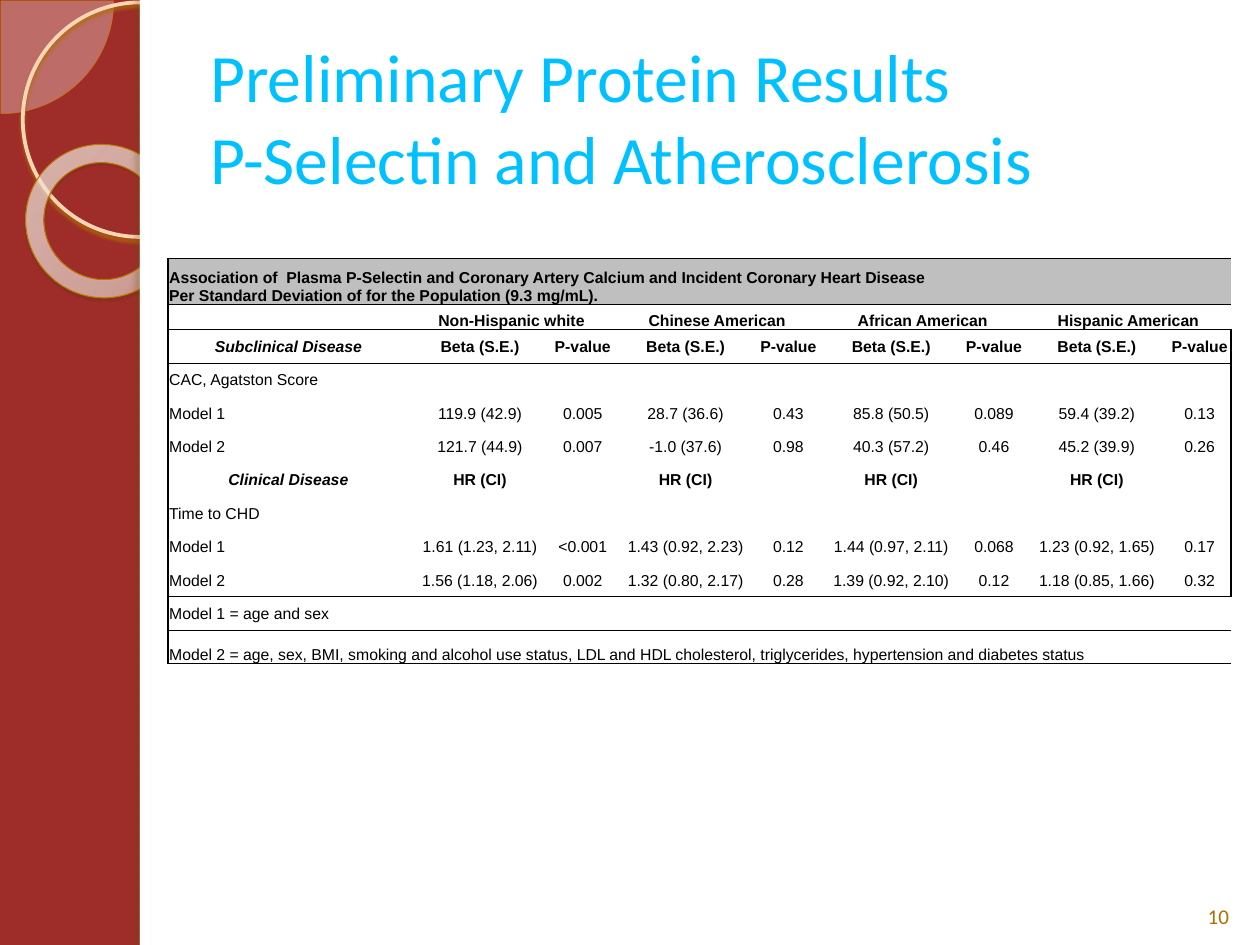
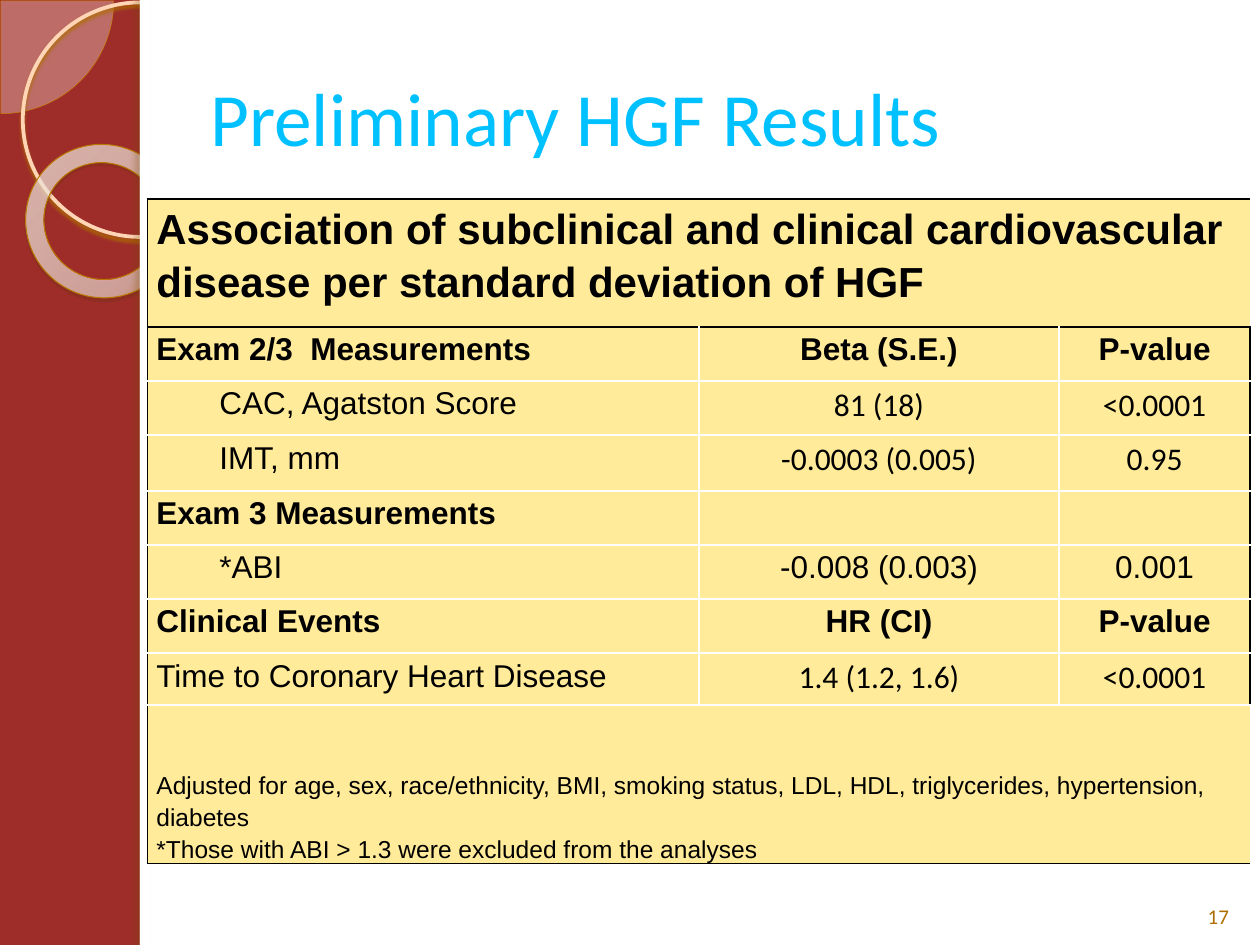
from pptx import Presentation
from pptx import util as u
from pptx.dml.color import RGBColor
from pptx.enum import shapes, text
from pptx.oxml import parse_xml
from pptx.oxml.ns import nsdecls, qn

Pt = u.Pt
MSO = shapes.MSO_SHAPE
LEFT, CENTER = text.PP_ALIGN.LEFT, text.PP_ALIGN.CENTER
TOP, MIDDLE, BOTTOM = (text.MSO_ANCHOR.TOP, text.MSO_ANCHOR.MIDDLE,
                       text.MSO_ANCHOR.BOTTOM)

C = {"band": "9E2D2A", "panel": "FFFFFF", "title": "00C1FF", "number": "AD6F00",
     "ink": "000000", "grey": "BFBFBF", "sand": "FFEB99"}

SLIDE_W, SLIDE_H = 720, 540
TITLE_BOX = (113, 21.6, 590.4, 90)
NUMBER_BOX = (678.2, 496.8, 36, 37.4)

# Shadow: colour, opacity %, blur, distance, direction
DECOR = [
    dict(kind=MSO.PIE, box=(-64, -64, 129, 129), adj=(0, 54.02),
         fill=("FFEFE4", 33), line=("C88000", 0.25)),
    dict(kind=MSO.OVAL, box=(13, 1.4, 134, 134), line=("FFD5B6", 2.15),
         shadow=("AD6F00", 85, 2, 2, 90)),
    dict(kind=MSO.DONUT, box=(14.4, 82.8, 88.6, 87.1), adj=(0.12,), turn=38.6,
         stops=[(0, "FFF5EE", 70), (70, "FFFAF6", 55), (100, "CE8400", 60)],
         line=("BB7800", 0.58), shadow=("563700", 35, 1, 1.2, 75)),
    dict(kind=MSO.RECTANGLE, box=(80, 0, 640, 540), fill=(C["panel"], 100)),
    dict(kind=MSO.RECTANGLE, box=(80, 0, 5.8, 540), fill=(C["panel"], 100),
         shadow=("724A02", 25, 3, 3, 180)),
]

# In a row, None joins the cell to its left; short rows are filled with None.
SELECTIN_ROWS = [
    ("Association of  Plasma P-Selectin and Coronary Artery Calcium and "
     "Incident Coronary Heart Disease \n"
     "Per Standard Deviation of for the Population (9.3 mg/mL).",),
    ("", "Non-Hispanic white", None, "Chinese American", None,
     "African American", None, "Hispanic American", None),
    ("Subclinical Disease",) + ("Beta (S.E.)", "P-value") * 4,
    ("CAC, Agatston Score",) + ("",) * 8,
    ("Model 1", "119.9 (42.9)", "0.005", "28.7 (36.6)", "0.43",
     "85.8 (50.5)", "0.089", "59.4 (39.2)", "0.13"),
    ("Model 2", "121.7 (44.9)", "0.007", "-1.0 (37.6)", "0.98",
     "40.3 (57.2)", "0.46", "45.2 (39.9)", "0.26"),
    ("Clinical Disease",) + ("HR (CI)", "") * 4,
    ("Time to CHD",) + ("",) * 8,
    ("Model 1", "1.61 (1.23, 2.11)", "<0.001", "1.43 (0.92, 2.23)", "0.12",
     "1.44 (0.97, 2.11)", "0.068", "1.23 (0.92, 1.65)", "0.17"),
    ("Model 2", "1.56 (1.18, 2.06)", "0.002", "1.32 (0.80, 2.17)", "0.28",
     "1.39 (0.92, 2.10)", "0.12", "1.18 (0.85, 1.66)", "0.32"),
    ("Model 1 = age and sex",),
    ("Model 2 = age, sex, BMI, smoking and alcohol use status, LDL and HDL "
     "cholesterol, triglycerides, hypertension and diabetes status",),
]
HGF_ROWS = [
    ("Association of subclinical and clinical cardiovascular disease "
     "per standard deviation of HGF",),
    ("Exam 2/3  Measurements", "Beta (S.E.)", "P-value"),
    ("CAC, Agatston Score", "81 (18)", "<0.0001"),
    ("IMT, mm", "-0.0003 (0.005)", "0.95"),
    ("Exam 3 Measurements", "", ""),
    ("*ABI", "-0.008 (0.003)", "0.001"),
    ("Clinical Events", "HR (CI)", "P-value"),
    ("Time to Coronary Heart Disease", "1.4 (1.2, 1.6)", "<0.0001"),
    ("Adjusted for age, sex, race/ethnicity, BMI, smoking status, LDL, HDL, "
     "triglycerides, hypertension, diabetes\n"
     "*Those with ABI > 1.3 were excluded from the analyses",),
]


def selectin_format(row, col):
    heading = row in (2, 6)
    return dict(size=9, bold=row < 2 or heading, italic=heading and col == 0,
                align=CENTER if col or heading else LEFT,
                anchor=BOTTOM if row in (0, 1, 11) else MIDDLE,
                fill=C["grey"] if row == 0 else None)


def hgf_format(row, col):
    return dict(size={0: 24, 8: 14}.get(row, 18), bold=row in (0, 1, 4, 6),
                name="Calibri" if col and row in (2, 3, 7) else "Arial",
                align=CENTER if col else LEFT, spacing=1.15,
                indent=36 if col == 0 and row in (2, 3, 5) else 0,
                anchor=BOTTOM if row == 8 else TOP, fill=C["sand"])


BLACK, THIN, WHITE = (C["ink"], 1), (C["ink"], 0.5), (C["panel"], 1)
SLIDES = [
    dict(title="Preliminary Protein Results \nP-Selectin and Atherosclerosis",
         title_size=38.7, number="10", rows=SELECTIN_ROWS, at=(96, 147.6),
         widths=[137.5] + [81.5, 36] * 4, heights=[26.5, 14.3] + [19.1] * 10,
         cell_format=selectin_format, inset=0.7,
         rules={1: THIN, 2: THIN, 10: THIN}, column_rule=None),
    dict(title="Preliminary HGF Results", title_size=43, number="17",
         rows=HGF_ROWS, at=(84.2, 113.8), widths=[315.2, 205.8, 109.2],
         heights=[73.1, 30.9, 30.9, 31.9, 30.9, 30.9, 30.9, 29.7, 90.5],
         cell_format=hgf_format, inset=5.2,
         rules={1: BLACK, **{n: WHITE for n in range(2, 9)}}, column_rule=WHITE),
]


def rgb(hex_):
    return RGBColor.from_string(hex_)


def pts(values):
    return [Pt(v) for v in values]


def clr(hex_, opacity):
    return f'<a:srgbClr val="{hex_}"><a:alpha val="{opacity * 1000}"/></a:srgbClr>'


def set_attrs(obj, **values):
    for name, value in values.items():
        setattr(obj, name, value)


def write(tf, lines, size, name, color, align, bold=None, italic=None,
          spacing=None, indent=0):
    for i, line in enumerate(lines.split("\n")):
        p = tf.paragraphs[0] if i == 0 else tf.add_paragraph()
        set_attrs(p, alignment=align, line_spacing=spacing)
        if indent:
            p._p.get_or_add_pPr().set("marL", str(Pt(indent)))
        if line:
            r = p.add_run()
            r.text = line
            set_attrs(r.font, size=Pt(size), name=name, bold=bold, italic=italic)
            r.font.color.rgb = rgb(color)
        else:
            p._p.get_or_add_endParaRPr().set("sz", str(int(size * 100)))


def add_decor(slide, item):
    sp = slide.shapes.add_shape(item["kind"], *pts(item["box"]))
    sp.rotation = item.get("turn", 0)
    for i, value in enumerate(item.get("adj", ())):
        sp.adjustments[i] = value
    spPr = sp._element.spPr
    if "stops" in item:
        stops = "".join(f'<a:gs pos="{at * 1000}">{clr(hex_, opacity)}</a:gs>'
                        for at, hex_, opacity in item["stops"])
        spPr.insert(2, parse_xml(
            f'<a:gradFill {nsdecls("a")}><a:gsLst>{stops}</a:gsLst>'
            '<a:path path="circle"><a:fillToRect l="-408000" t="-50000" '
            'r="508000" b="150000"/></a:path></a:gradFill>'))
    elif "fill" in item:
        hex_, opacity = item["fill"]
        sp.fill.solid()
        sp.fill.fore_color.rgb = rgb(hex_)
        if opacity < 100:
            color = spPr.find(qn("a:solidFill"))
            color.replace(color[0], parse_xml(clr(hex_, opacity).replace(
                "<a:srgbClr", f'<a:srgbClr {nsdecls("a")}', 1)))
    else:
        sp.fill.background()
    if "line" in item:
        hex_, width = item["line"]
        sp.line.color.rgb = rgb(hex_)
        sp.line.width = Pt(width)
    else:
        sp.line.fill.background()
    sp.shadow.inherit = False
    if "shadow" in item:
        hex_, opacity, blur, dist, angle = item["shadow"]
        spPr.find(qn("a:effectLst")).append(parse_xml(
            f'<a:outerShdw {nsdecls("a")} blurRad="{Pt(blur)}" dist="{Pt(dist)}" '
            f'dir="{angle * 60000}" algn="tl" rotWithShape="0">'
            f'{clr(hex_, opacity)}</a:outerShdw>'))
    return sp


def decorate_layout(layout, slide):
    """Draw the side band on the slide, then move it to the shared layout."""
    layout.background.fill.solid()
    layout.background.fill.fore_color.rgb = rgb(C["band"])
    for item in DECOR:
        layout.shapes._spTree.append(add_decor(slide, item)._element)


def add_border(cell, side, rule):
    if rule:
        hex_, width = rule
        cell._tc.get_or_add_tcPr().append(parse_xml(
            f'<a:ln{side} {nsdecls("a")} w="{Pt(width)}"><a:solidFill>'
            f'<a:srgbClr val="{hex_}"/></a:solidFill></a:ln{side}>'))


def add_results_table(slide, s):
    widths, heights = s["widths"], s["heights"]
    last_row, last_col = len(heights) - 1, len(widths) - 1
    frame = slide.shapes.add_table(len(heights), len(widths), *pts(s["at"]),
                                   Pt(sum(widths)), Pt(sum(heights)))
    table = frame.table
    set_attrs(table, first_row=False, horz_banding=False)
    # "No Style, No Grid"
    table._tbl.tblPr.find(qn("a:tableStyleId")).text = \
        "{2D5ABB26-0587-4C30-8999-92F81FD0307C}"
    for parts, attr, sizes in ((table.columns, "width", widths),
                               (table.rows, "height", heights)):
        for part, size in zip(parts, sizes):
            setattr(part, attr, Pt(size))

    for r, row in enumerate(s["rows"]):
        row = row + (None,) * (len(widths) - len(row))
        for c, words in enumerate(row):
            cell = table.cell(r, c)
            fmt = dict(name="Arial", color=C["ink"]) | s["cell_format"](r, c)
            fill, anchor = fmt.pop("fill"), fmt.pop("anchor")
            inset = Pt(s["inset"])
            set_attrs(cell, margin_left=inset, margin_right=inset, margin_bottom=0,
                      margin_top=Pt(0.7 if s["inset"] < 1 else 0),
                      vertical_anchor=anchor)
            inner = s["column_rule"]
            joins_next = c < last_col and row[c + 1] is None
            add_border(cell, "L", BLACK if c == 0 else inner if words is not None else None)
            add_border(cell, "R", BLACK if c == last_col else None if joins_next else inner)
            add_border(cell, "T", s["rules"].get(r, BLACK if r == 0 else None))
            add_border(cell, "B", s["rules"].get(r + 1, BLACK if r == last_row else None))
            if fill:
                cell.fill.solid()
                cell.fill.fore_color.rgb = rgb(fill)
            else:
                cell.fill.background()
            write(cell.text_frame, words or "", **fmt)
        starts = [c for c, words in enumerate(row) if words is not None]
        for start, stop in zip(starts, starts[1:] + [len(row)]):
            if stop - start > 1:
                table.cell(r, start).merge(table.cell(r, stop - 1))


def add_title(slide, s):
    title = slide.shapes.title
    set_attrs(title, **dict(zip(("left", "top", "width", "height"), pts(TITLE_BOX))))
    set_attrs(title.text_frame, vertical_anchor=MIDDLE, word_wrap=True,
              auto_size=text.MSO_AUTO_SIZE.NONE)
    write(title.text_frame, s["title"], s["title_size"], "Calibri", C["title"], LEFT)


def add_number(slide, number):
    tf = slide.shapes.add_textbox(*pts(NUMBER_BOX)).text_frame
    set_attrs(tf, word_wrap=True, vertical_anchor=BOTTOM)
    write(tf, number, 12, "Calibri", C["number"], CENTER)


def main():
    prs = Presentation()
    set_attrs(prs, slide_width=Pt(SLIDE_W), slide_height=Pt(SLIDE_H))
    layout = prs.slide_layouts.get_by_name("Title Only")
    for i, s in enumerate(SLIDES):
        slide = prs.slides.add_slide(layout)
        if i == 0:
            decorate_layout(layout, slide)
        add_title(slide, s)
        add_results_table(slide, s)
        add_number(slide, s["number"])
    prs.save("out.pptx")


if __name__ == "__main__":
    main()
